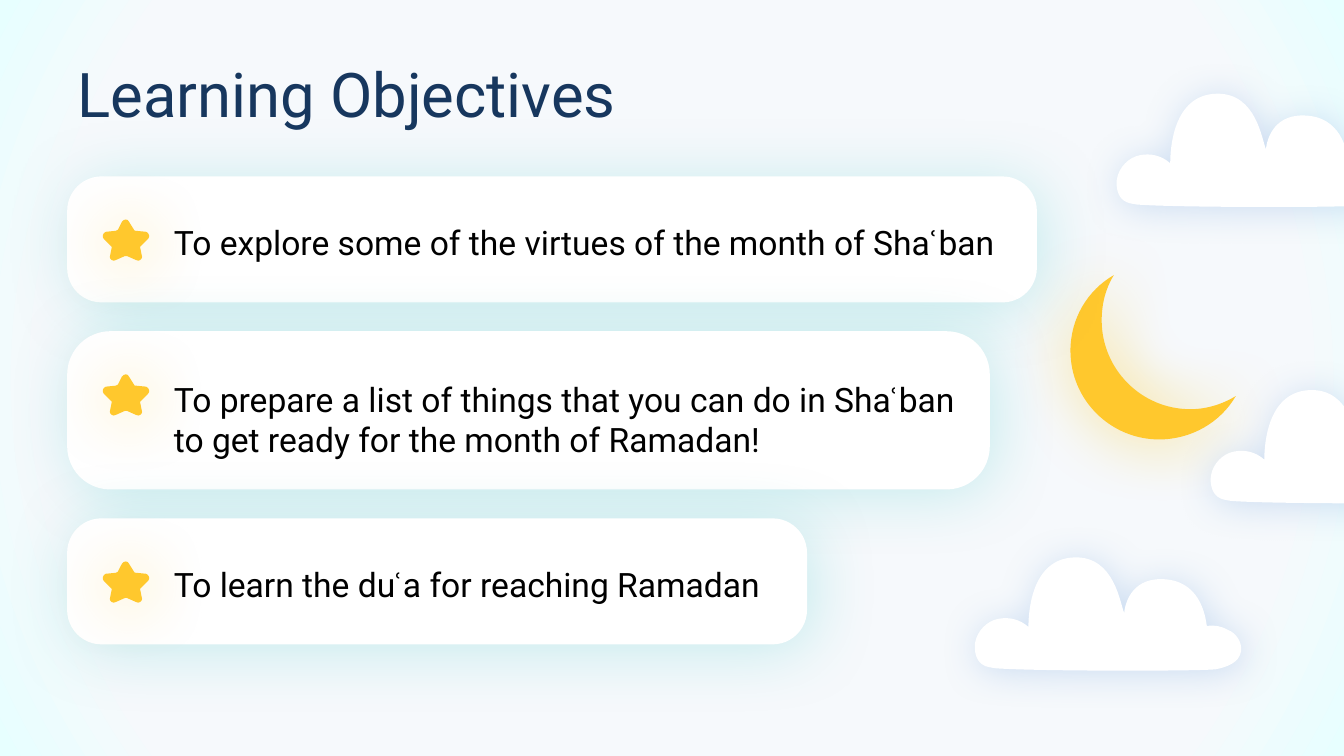
from lxml.etree import SubElement
from pptx import Presentation
from pptx.dml.color import RGBColor
from pptx.enum.shapes import MSO_SHAPE as Preset
from pptx.enum.text import MSO_ANCHOR as Anchor, PP_ALIGN as Align
from pptx.oxml import parse_xml
from pptx.oxml.ns import nsdecls, qn
from pptx.util import Pt

WIDTH, HEIGHT = 12192000, 6858000
COLUMN, ROW, UNIT = WIDTH / 20, HEIGHT / 30, HEIGHT / 750
FONT = "Roboto"
NAVY, BLACK, WHITE, YELLOW = "17375E", "000000", "FFFFFF", "FFC82D"
GOLD_GLOW = ("FFC000", 40, 48, 3)
TEAL_GLOW = ("00B4B1", 20, 50, 5)
BLUE_GLOW = ("8EB4E3", 40, 27, 3)

STAR = (46, 41, [
    (26, 2), (31, 10), (31, 11, 32, 11, 33, 11), (43, 12),
    (46, 13, 47, 17, 45, 19), (38, 26), (37, 26, 37, 27, 37, 27), (39, 37),
    (39, 39, 36, 42, 33, 40), (24, 36), (23, 36, 23, 36, 22, 36), (13, 40),
    (10, 42, 7, 39, 7, 37), (9, 27), (9, 27, 9, 26, 8, 26), (1, 19),
    (-1, 17, 0, 13, 3, 12), (13, 11), (14, 11, 14, 11, 15, 10), (19, 2),
    (21, -1, 25, -1, 26, 2),
])
MOON = (164, 163, [
    (43, 0), (35, 13, 31, 28, 31, 45), (31, 93, 70, 133, 119, 133),
    (135, 133, 151, 128, 164, 120), (149, 146, 120, 163, 88, 163),
    (40, 163, 0, 124, 0, 75), (0, 43, 17, 15, 43, 0),
])
CLOUD = (264, 113, [
    (191, 22), (157, 18, 149, 44, 148, 55), (144, 47, 139, -1, 99, 0),
    (56, 1, 53, 54, 53, 69), (44, 61, 33, 59, 23, 61), (12, 63, 2, 73, 0, 85),
    (-1, 93, 1, 102, 7, 106), (11, 109, 15, 109, 20, 110),
    (58, 113, 224, 113, 239, 111), (249, 109, 262, 105, 264, 93),
    (265, 84, 259, 75, 251, 72), (244, 68, 237, 67, 230, 68),
    (229, 63, 226, 26, 191, 22),
])
CLOUD_PLACES = [(16.62, 3.72), (18.02, 15.48), (14.51, 22.12)]

CARDS = [
    (14.43, 5, 1.61, 15.24, 2.28,
     ("To explore some of the virtues of the month of Sha", "ban"), True),
    (13.73, 6.28, 1.69, 12.17, 3.96,
     ("To prepare a list of things that you can do in Sha",
      "ban to get ready for the month of Ramadan!"), False),
    (11.01, 5, 1.62, 15.24, 2.28,
     ("To learn the du", "a for reaching Ramadan"), False),
]


def color(value):
    """Turn a hex string into a colour."""
    return RGBColor.from_string(value)


def grid(left, top, columns, rows):
    """Turn grid columns and rows into a box."""
    return [round(size) for size in
            (left * COLUMN, top * ROW, columns * COLUMN, rows * ROW)]


def place(shape, box):
    """Move and size a shape to a box."""
    shape.left, shape.top, shape.width, shape.height = box


def paint(shape, fill, glow):
    """Give a shape a plain fill, no line and a soft shadow."""
    shape.fill.solid()
    shape.fill.fore_color.rgb = color(fill)
    shape.line.fill.background()
    shape.shadow.inherit = False
    tint, alpha, blur, distance = glow
    effects = shape.element.spPr.find(qn("a:effectLst"))
    effects.append(parse_xml(
        f'<a:outerShdw {nsdecls("a")} blurRad="{Pt(blur)}" dist="{Pt(distance)}" '
        f'dir="2700000" rotWithShape="0"><a:srgbClr val="{tint}">'
        f'<a:alpha val="{alpha * 1000}"/></a:srgbClr></a:outerShdw>'))


def bend(shape, width, height, segments):
    """Give a freeform its true lines and cubic curves."""
    track = next(shape.element.iter(qn("a:path")))
    for step in list(track):
        track.remove(step)
    track.set("w", str(width))
    track.set("h", str(height))
    for index, numbers in enumerate(segments):
        kind = "cubicBezTo" if len(numbers) == 6 else "lnTo" if index else "moveTo"
        step = SubElement(track, qn(f"a:{kind}"))
        for x, y in zip(numbers[::2], numbers[1::2]):
            SubElement(step, qn("a:pt"), x=str(x), y=str(y))
    SubElement(track, qn("a:close"))


def add_outline(page, outline, left, top, fill, glow):
    """Draw a curved outline from its top left corner on the grid."""
    width, height, segments = outline
    start, *others = [numbers[-2:] for numbers in segments]
    builder = page.shapes.build_freeform(*start, scale=UNIT)
    builder.add_line_segments(others, close=True)
    shape = builder.convert_to_shape()
    place(shape, (round(left * COLUMN), round(top * ROW),
                  round(width * UNIT), round(height * UNIT)))
    bend(shape, width, height, segments)
    paint(shape, fill, glow)


def add_span(para, words, size, tint):
    """Add one run of text to a paragraph."""
    span = para.add_run()
    span.text = words
    span.font.name = FONT
    span.font.size = Pt(size)
    span.font.color.rgb = color(tint)
    return span


def add_background(page):
    """Fill the page with a radial gradient that brightens at the corners."""
    page.element.cSld.insert(0, parse_xml(
        f'<p:bg {nsdecls("p", "a")}><p:bgPr><a:gradFill rotWithShape="1"><a:gsLst>'
        '<a:gs pos="81000"><a:srgbClr val="F6F9FC"/></a:gs>'
        '<a:gs pos="100000"><a:srgbClr val="E7FFFF"/></a:gs></a:gsLst>'
        '<a:path path="circle"><a:fillToRect l="50000" t="50000" r="50000" b="50000"/>'
        '</a:path></a:gradFill><a:effectLst/></p:bgPr></p:bg>'))


def add_title(page, box):
    """Place and format the title."""
    title = page.shapes.title
    place(title, box)
    frame = title.text_frame
    frame.vertical_anchor = Anchor.MIDDLE
    para = frame.paragraphs[0]
    para.alignment = Align.LEFT
    add_span(para, "Learning Objectives", 44, NAVY)


def add_card(page, left, top, card):
    """Draw one objective card with its star and text."""
    columns, rows, text_top, text_columns, text_rows, words, bold = card
    panel = page.shapes.add_shape(Preset.ROUNDED_RECTANGLE,
                                  *grid(left, top, columns, rows))
    panel.adjustments[0] = 0.273
    paint(panel, WHITE, TEAL_GLOW)
    add_outline(page, STAR, left + 0.53, top + 1.72, YELLOW, GOLD_GLOW)
    box = page.shapes.add_textbox(
        *grid(left + 1.44, top + text_top, text_columns, text_rows))
    box.text_frame.word_wrap = True
    para = box.text_frame.paragraphs[0]
    before, after = words
    add_span(para, before, 24, BLACK)
    ayn = add_span(para, "ʿ", 24, BLACK)
    ayn.font.bold = bold
    ayn.font._element.set("spc", "200")
    add_span(para, after, 24, BLACK)


def add_cards(page, left, top, bottom):
    """Stack the objective cards with equal gaps."""
    gap = (bottom - top - sum(card[1] for card in CARDS)) / (len(CARDS) - 1)
    for card in CARDS:
        add_card(page, left, top, card)
        top += card[1] + gap


def main():
    """Build the deck."""
    deck = Presentation()
    deck.slide_width, deck.slide_height = WIDTH, HEIGHT
    page = deck.slides.add_slide(deck.slide_layouts[5])
    add_background(page)
    add_outline(page, MOON, 15.93, 10.92, YELLOW, GOLD_GLOW)
    add_title(page, grid(1, 1.2, 18, 5))
    add_cards(page, 1, 7, 25.57)
    for left, top in CLOUD_PLACES:
        add_outline(page, CLOUD, left, top, WHITE, BLUE_GLOW)
    deck.save("out.pptx")


if __name__ == "__main__":
    main()
